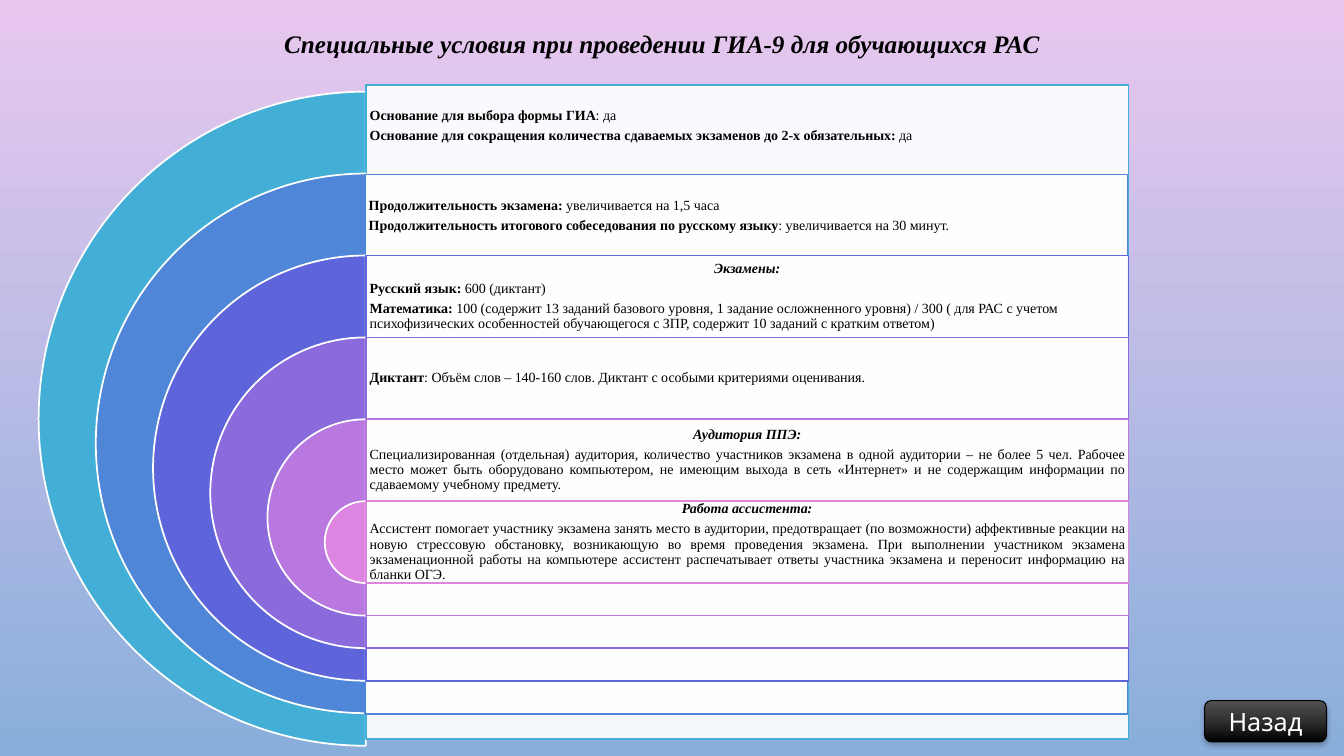
from copy import deepcopy

from lxml import etree
from pptx import Presentation
from pptx.dml.color import RGBColor
from pptx.enum.shapes import MSO_SHAPE
from pptx.enum.text import MSO_ANCHOR, MSO_AUTO_SIZE, PP_ALIGN
from pptx.oxml.ns import qn
from pptx.util import Pt

PIE, RECT, ROUND = MSO_SHAPE.PIE, MSO_SHAPE.RECTANGLE, MSO_SHAPE.ROUNDED_RECTANGLE
LEFT, MID, JUST = PP_ALIGN.LEFT, PP_ALIGN.CENTER, PP_ALIGN.JUSTIFY
TOP, CENTER = MSO_ANCHOR.TOP, MSO_ANCHOR.MIDDLE

# Content: each row holds (alignment, bold part, plain part)
TITLE = "Специальные условия при проведении ГИА-9 для обучающихся РАС"
BACK = "Назад"
ROWS = [
    [(JUST, "Основание для выбора формы ГИА", ": да"),
     (JUST, "Основание для сокращения количества сдаваемых экзаменов "
            "до 2-х обязательных: ", "да")],
    [(JUST, "Продолжительность экзамена: ", "увеличивается на 1,5 часа"),
     (JUST, "Продолжительность итогового собеседования по русскому языку",
      ": увеличивается на 30 минут.")],
    [(MID, "Экзамены:", ""),
     (JUST, "Русский язык: ", "600 (диктант)"),
     (LEFT, "Математика: ",
      "100 (содержит 13 заданий базового уровня, 1 задание осложненного "
      "уровня) / 300 ( для РАС с учетом психофизических особенностей "
      "обучающегося с ЗПР, содержит 10 заданий с кратким ответом)")],
    [(JUST, "Диктант", ": Объём слов – 140-160 слов. Диктант с особыми "
                       "критериями оценивания.")],
    [(MID, "Аудитория ППЭ:", ""),
     (JUST, "", "Специализированная (отдельная) аудитория, количество "
                "участников экзамена в одной аудитории – не более 5 чел. "
                "Рабочее место может быть оборудовано компьютером, не имеющим "
                "выхода в сеть «Интернет» и не содержащим информации по "
                "сдаваемому учебному предмету.")],
    [(MID, "Работа ассистента:", ""),
     (JUST, "", "Ассистент помогает участнику экзамена занять место в "
                "аудитории, предотвращает (по возможности) аффективные реакции "
                "на новую стрессовую обстановку, возникающую во время "
                "проведения экзамена. При выполнении участником экзамена "
                "экзаменационной работы на компьютере ассистент распечатывает "
                "ответы участника экзамена и переносит информацию на бланки "
                "ОГЭ.")],
]

THEME = {
    "rings": ["43AFD6", "5086D8", "5E64DA", "8B6BDC", "B878DF", "DE85E1"],
    "back": ["E9C8EF", "89AEDB"],
    "button": ["515151", "2F2F2F", "000000"],
    "ink": "000000", "paper": "FFFFFF",
    "serif": "Times New Roman", "sans": "Cabin",
    "head": 18, "body": 10,
}

# Layout in points
AXIS, FIRST, BAND = 261.2, 65.5, 58.5     # ring centre, top of first ring, row height
WIDE, OUTER = 545, 467.2                  # panel width, largest diameter
STEP = (OUTER - BAND) / (len(ROWS) - 1)
NUDGE = {0: (0, -5), 1: (-0.7, 0.7)}      # small panel offsets


def color(code):
    return RGBColor.from_string(code)


def style(font, face, size, code):
    font.name, font.size, font.color.rgb = face, Pt(size), color(code)


def blend(fill, root, codes):
    """Even vertical gradient through the given colours."""
    fill.gradient()
    fill.gradient_angle = 270
    stops = root.find(".//" + qn("a:gsLst"))
    while len(stops) < len(codes):
        stops.append(deepcopy(stops[-1]))
    for i, (stop, code) in enumerate(zip(fill.gradient_stops, codes)):
        stop.position = i / (len(codes) - 1)
        stop.color.rgb = color(code)


def alpha(node, share):
    etree.SubElement(node, qn("a:alpha"), val=str(share * 1000))


def add(slide, kind, box, line, width=1.25, fill=None):
    shape = slide.shapes.add_shape(kind, *map(Pt, box))
    shape.shadow.inherit = False
    if fill:
        shape.fill.solid()
        shape.fill.fore_color.rgb = color(fill)
    shape.line.color.rgb = color(line)
    shape.line.width = Pt(width)
    return shape


def write(slide, box, rows):
    frame = slide.shapes.add_textbox(*map(Pt, box)).text_frame
    frame.word_wrap = True
    frame.vertical_anchor = CENTER
    frame.margin_left = frame.margin_right = Pt(2.88)
    frame.margin_top = frame.margin_bottom = Pt(2.88)
    for i, (align, bold, plain) in enumerate(rows):
        para = frame.add_paragraph() if i else frame.paragraphs[0]
        para.alignment = align
        para.line_spacing = 0.9
        para.space_after = Pt(3.5)
        style(para.font, THEME["serif"], THEME["body"], THEME["ink"])
        para.font.italic = align == MID
        for text, heavy in ((bold, True), (plain, False)):
            if text:
                run = para.add_run()
                run.text = text
                run.font.bold = heavy


def main():
    deck = Presentation()
    deck.slide_width, deck.slide_height = Pt(960), Pt(540)
    slide = deck.slides.add_slide(deck.slide_layouts[5])
    blend(slide.background.fill, slide.element, THEME["back"])

    # Title
    title = slide.shapes.title
    title.left, title.top, title.width, title.height = map(Pt, (195.8, 5.8, 571, 40.3))
    frame = title.text_frame
    frame.text = TITLE
    frame.word_wrap = True
    frame.vertical_anchor = TOP
    frame.auto_size = MSO_AUTO_SIZE.SHAPE_TO_FIT_TEXT
    para = frame.paragraphs[0]
    para.alignment = JUST
    para.line_spacing = 1.5
    style(para.font, THEME["serif"], THEME["head"], THEME["ink"])
    para.font.bold = para.font.italic = True

    # Nested half rings, each with its panel and text
    for i, (rows, code) in enumerate(zip(ROWS, THEME["rings"])):
        size, top = OUTER - i * STEP, FIRST + i * BAND
        ring = add(slide, PIE, (AXIS - size / 2, top, size, size),
                   THEME["paper"], fill=code)
        ring.adjustments[0], ring.adjustments[1] = 54, 162
        dx, dy = NUDGE.get(i, (0, 0))
        x, y = AXIS + dx, top + dy
        panel = add(slide, RECT, (x, y, WIDE, size), code, fill=THEME["paper"])
        alpha(panel.element.spPr.find(qn("a:solidFill"))[0], 90)
        write(slide, (x, y, WIDE, BAND), rows)

    # Back button with a soft shadow
    button = add(slide, ROUND, (860.4, 500.4, 87.1, 29.5), THEME["ink"], 0.75)
    blend(button.fill, button.element, THEME["button"])
    shade = etree.SubElement(
        button.element.spPr.find(qn("a:effectLst")), qn("a:outerShdw"),
        blurRad=str(Pt(4)), dist=str(Pt(2)), dir="5400000", rotWithShape="0")
    alpha(etree.SubElement(shade, qn("a:srgbClr"), val=THEME["ink"]), 28)
    button.text_frame.text = BACK
    button.text_frame.vertical_anchor = CENTER
    para = button.text_frame.paragraphs[0]
    para.alignment = MID
    style(para.font, THEME["sans"], THEME["head"], THEME["paper"])

    deck.save("out.pptx")


if __name__ == "__main__":
    main()
